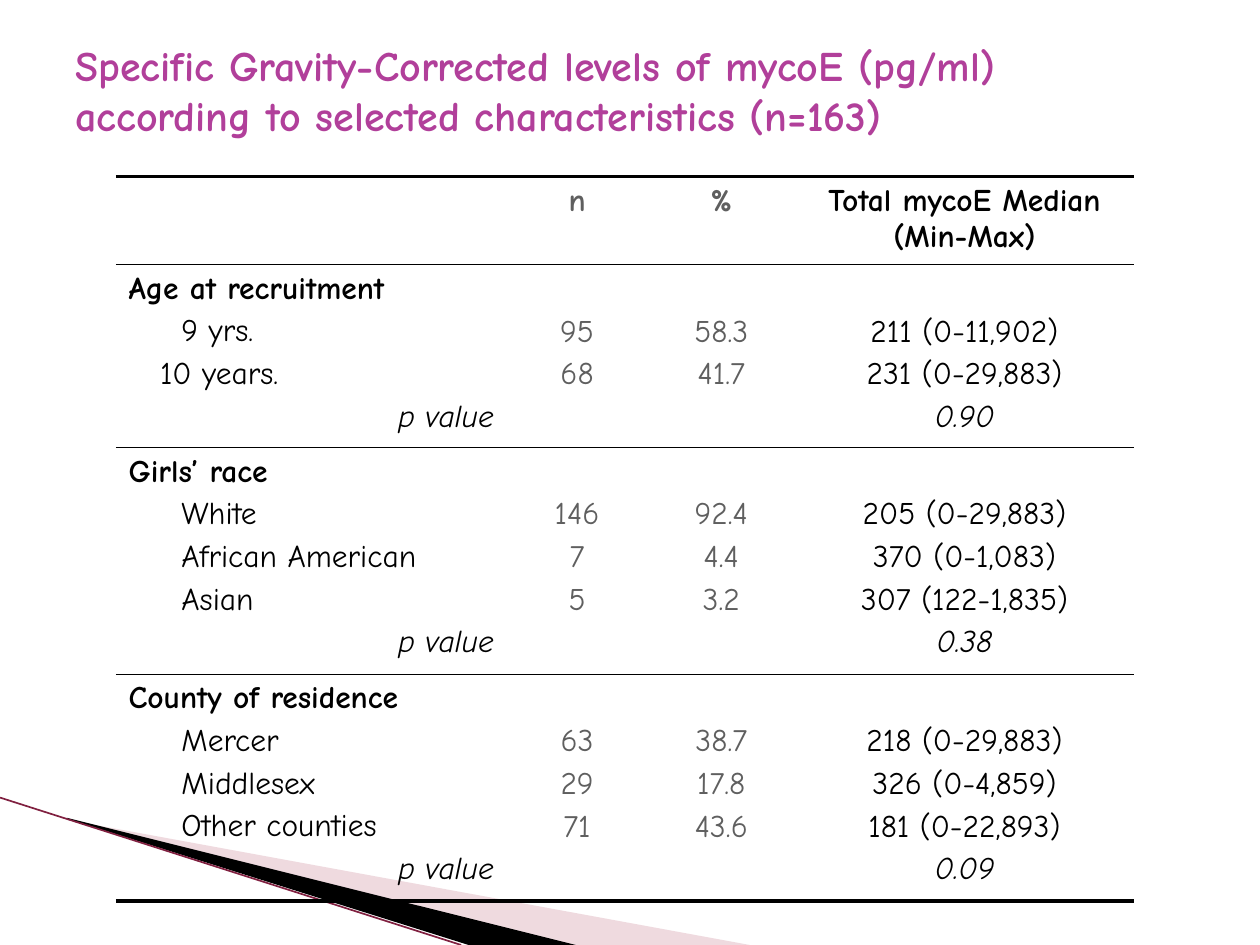
from lxml import etree
from pptx import Presentation
from pptx import util as u
from pptx.dml.color import RGBColor
from pptx.enum import shapes, text
from pptx.oxml import ns

Inches, Pt = u.Inches, u.Pt
HUES = {"title": "B13F9A", "ink": "000000", "gray": "5F5F5F",
        "pink": "D8A3AF", "wine": "802040", "white": "FFFFFF"}
FACE = "Comic Neue"


def style(para, size, hue, bold=False, slant=False):
    font = para.font
    font.name, font.size = FACE, Pt(size)
    font.bold, font.italic = bold, slant
    font.color.rgb = RGBColor.from_string(HUES[hue])


def edge(cell, side, spot, width):
    line = etree.Element(ns.qn("a:ln" + side), w=str(Pt(width)))
    if width:
        fill = etree.SubElement(line, ns.qn("a:solidFill"))
        etree.SubElement(fill, ns.qn("a:srgbClr"), val=HUES["ink"])
    else:
        etree.SubElement(line, ns.qn("a:noFill"))
    cell._tc.get_or_add_tcPr().insert(spot, line)


deck = Presentation()
deck.slide_width, deck.slide_height = Inches(10), Inches(7.5)
slide = deck.slides.add_slide(deck.slide_layouts[6])

wedges = [("pink", [(0.55, 6.51), (5.95, 7.5), (4.56, 7.5), (0.55, 6.5)]),
          ("ink", [(0.53, 6.49), (4.57, 7.5), (3.72, 7.5), (0.54, 6.5)])]
for hue, points in wedges:
    spots = [(Inches(x), Inches(y)) for x, y in points]
    path = slide.shapes.build_freeform(*spots[0])
    path.add_line_segments(spots[1:])
    wedge = path.convert_to_shape()
    wedge.shadow.inherit = False
    wedge.fill.solid()
    wedge.fill.fore_color.rgb = RGBColor.from_string(HUES[hue])
    wedge.line.fill.background()
    if hue == "pink":
        tint = wedge._element.spPr.find(".//" + ns.qn("a:srgbClr"))
        etree.SubElement(tint, ns.qn("a:alpha"), val="40000")

streak = slide.shapes.add_connector(shapes.MSO_CONNECTOR.STRAIGHT, 0, Inches(6.33),
                                    Inches(3.66), Inches(7.5))
streak.line.color.rgb = RGBColor.from_string(HUES["wine"])
streak.line.width = Pt(0.95)
etree.SubElement(streak._element.spPr, ns.qn("a:effectLst"))

title = slide.shapes.add_textbox(Inches(0.5), Inches(0.25), Inches(9), Inches(0.92))
frame = title.text_frame
frame.word_wrap = True
frame.vertical_anchor = text.MSO_ANCHOR.MIDDLE
frame.text = ("Specific Gravity-Corrected levels of mycoE (pg/ml) "
              "according to selected characteristics (n=163)")
style(frame.paragraphs[0], 24, "title", bold=True)

heads = ["", "n", "%", "Total mycoE Median (Min-Max)"]
groups = [
    ("Age at recruitment", [
        ("9 yrs.", "95", "58.3", "211 (0-11,902)"),
        ("10 years.", "68", "41.7", "231 (0-29,883)")], "0.90"),
    ("Girls’ race", [
        ("White", "146", "92.4", "205 (0-29,883)"),
        ("African American", "7", "4.4", "370 (0-1,083)"),
        ("Asian", "5", "3.2", "307 (122-1,835)")], "0.38"),
    ("County of residence", [
        ("Mercer", "63", "38.7", "218 (0-29,883)"),
        ("Middlesex", "29", "17.8", "326 (0-4,859)"),
        ("Other counties", "71", "43.6", "181 (0-22,893)")], "0.09"),
]
rows = [[[head] for head in heads]]
for name, items, odds in groups:
    names, counts, shares, levels = map(list, zip(*items))
    rows.append([[name, *names, "p value"], counts, shares, [*levels, odds]])

wides, highs = [3.1, 1.12, 1.17, 2.69], [0.68, 1.4, 1.79, 1.74]
grid = slide.shapes.add_table(4, 4, Inches(0.92), Inches(1.4),
                              Inches(sum(wides)), Inches(sum(highs))).table
grid.first_row = grid.horz_banding = False
for col, wide in zip(grid.columns, wides):
    col.width = Inches(wide)
for row, high in zip(grid.rows, highs):
    row.height = Inches(high)

for r, row in enumerate(rows):
    for c, lines in enumerate(row):
        cell = grid.cell(r, c)
        if (r, c) == (2, 3):
            cell.fill.solid()
            cell.fill.fore_color.rgb = RGBColor.from_string(HUES["white"])
        else:
            cell.fill.background()
        tops = 2.25 if r == 0 else 1
        ends = 2.25 if r == 3 else 1
        for spot, (side, width) in enumerate(zip("LRTB", (0, 0, tops, ends))):
            edge(cell, side, spot, width)
        cell.margin_top = Inches(0.39 if r and c else 0.05)
        frame = cell.text_frame
        frame.text = "\n".join(lines)
        for i, para in enumerate(frame.paragraphs):
            odds = r > 0 and c in (0, 3) and i == len(lines) - 1
            if c:
                para.alignment = text.PP_ALIGN.CENTER
            elif odds:
                para.alignment = text.PP_ALIGN.RIGHT
            elif i:
                inset = 0.25 if lines[i] == "10 years." else 0.42
                para._p.get_or_add_pPr().set("marL", str(Inches(inset)))
            if i:
                para.space_before = Pt(3.6)
            style(para, 18, "gray" if c in (1, 2) else "ink",
                  bold=r == 0 or (c == 0 and i == 0), slant=odds)

deck.save("out.pptx")
